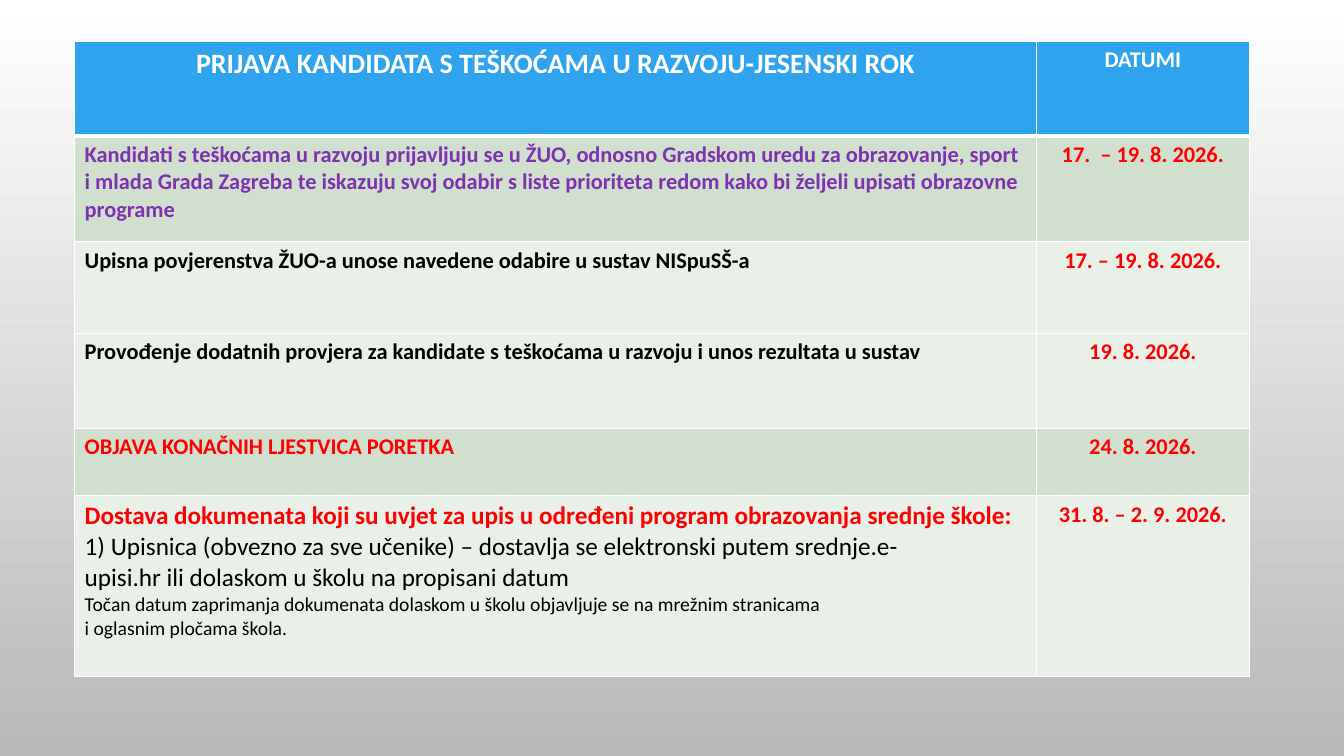
from lxml.etree import SubElement
from pptx import Presentation
from pptx.dml.color import RGBColor
from pptx.enum.text import PP_ALIGN
from pptx.oxml import parse_xml
from pptx.oxml.ns import nsdecls
from pptx.util import Inches, Pt

COLORS = {
    "white": "FFFFFF",
    "grey": "B9B9B9",
    "header": "2FA3EE",
    "green": "D1DFCE",
    "pale": "E9F0E8",
    "purple": "7E32B0",
    "red": "FF0000",
    "black": "000000",
}
COLUMN_WIDTHS = [9.54, 2.11]

HEADER = (
    0.94,
    "header",
    [("PRIJAVA KANDIDATA S TEŠKOĆAMA U RAZVOJU-JESENSKI ROK", 20, "white", True)],
    "DATUMI",
)
STEPS = [
    (1.05, "green", [(
        "Kandidati s teškoćama u razvoju prijavljuju se u ŽUO, odnosno Gradskom uredu "
        "za obrazovanje, sport i mlada Grada Zagreba te iskazuju svoj odabir s liste "
        "prioriteta redom kako bi željeli upisati obrazovne programe",
        16, "purple", True)], "17.  – 19. 8. 2026."),
    (0.91, "pale", [(
        "Upisna povjerenstva ŽUO-a unose navedene odabire u sustav NISpuSŠ-a",
        16, "black", True)], "17. – 19. 8. 2026."),
    (0.94, "pale", [(
        "Provođenje dodatnih provjera za kandidate s teškoćama u razvoju i unos "
        "rezultata u sustav", 16, "black", True)], "19. 8. 2026."),
    (0.67, "green", [
        ("OBJAVA KONAČNIH LJESTVICA PORETKA", 16, "red", True)], "24. 8. 2026."),
    (1.79, "pale", [
        ("Dostava dokumenata koji su uvjet za upis u određeni program obrazovanja "
         "srednje škole:", 18, "red", True),
        ("1) Upisnica (obvezno za sve učenike) – dostavlja se elektronski putem "
         "srednje.e-", 18, "black", False),
        ("upisi.hr ili dolaskom u školu na propisani datum", 18, "black", False),
        ("Točan datum zaprimanja dokumenata dolaskom u školu objavljuje se na "
         "mrežnim stranicama", 14, "black", False),
        ("i oglasnim pločama škola.", 14, "black", False),
    ], "31. 8. – 2. 9. 2026."),
]


def rgb(name):
    return RGBColor.from_string(COLORS[name])


def paint_background(slide):
    fill = slide.background.fill
    fill.gradient()
    fill.gradient_angle = 270
    for stop, name in zip(fill.gradient_stops, ("white", "grey")):
        stop.color.rgb = rgb(name)


def draw_borders(cell, top, bottom):
    properties = cell._tc.get_or_add_tcPr()
    sides = {"lnL": 1, "lnR": 1, "lnT": top, "lnB": bottom}
    for position, (side, width) in enumerate(sides.items()):
        border = parse_xml(f'<a:{side} {nsdecls("a")} w="{Pt(width)}"/>')
        namespace = border.nsmap["a"]
        solid = SubElement(border, f"{{{namespace}}}solidFill")
        SubElement(solid, f"{{{namespace}}}srgbClr", val=COLORS["white"])
        properties.insert(position, border)


def write_cell(cell, lines, background, alignment):
    cell.fill.solid()
    cell.fill.fore_color.rgb = rgb(background)
    frame = cell.text_frame
    for index, (words, size, color, bold) in enumerate(lines):
        paragraph = frame.add_paragraph() if index else frame.paragraphs[0]
        paragraph.text = words
        paragraph.alignment = alignment
        paragraph.font.name = "Calibri"
        paragraph.font.size = Pt(size)
        paragraph.font.bold = bold
        paragraph.font.color.rgb = rgb(color)


def add_schedule(slide, left, top):
    entries = [HEADER] + STEPS
    height = sum(entry[0] for entry in entries)
    schedule = slide.shapes.add_table(
        len(entries), len(COLUMN_WIDTHS), Inches(left), Inches(top),
        Inches(sum(COLUMN_WIDTHS)), Inches(height)).table
    for column, width in zip(schedule.columns, COLUMN_WIDTHS):
        column.width = Inches(width)
    for number, (row_height, background, lines, date) in enumerate(entries):
        schedule.rows[number].height = Inches(row_height)
        is_header = number == 0
        step_cell, date_cell = schedule.cell(number, 0), schedule.cell(number, 1)
        date_color = "white" if is_header else "red"
        write_cell(step_cell, lines, background,
                   PP_ALIGN.CENTER if is_header else PP_ALIGN.LEFT)
        write_cell(date_cell, [(date, 16, date_color, True)], background,
                   PP_ALIGN.CENTER)
        for cell in (step_cell, date_cell):
            draw_borders(cell, 3 if number == 1 else 1, 3 if is_header else 1)


def main():
    presentation = Presentation()
    presentation.slide_width = Inches(13.33)
    presentation.slide_height = Inches(7.5)
    slide = presentation.slides.add_slide(presentation.slide_layouts[6])
    paint_background(slide)
    add_schedule(slide, 0.74, 0.41)
    presentation.save("out.pptx")


if __name__ == "__main__":
    main()
